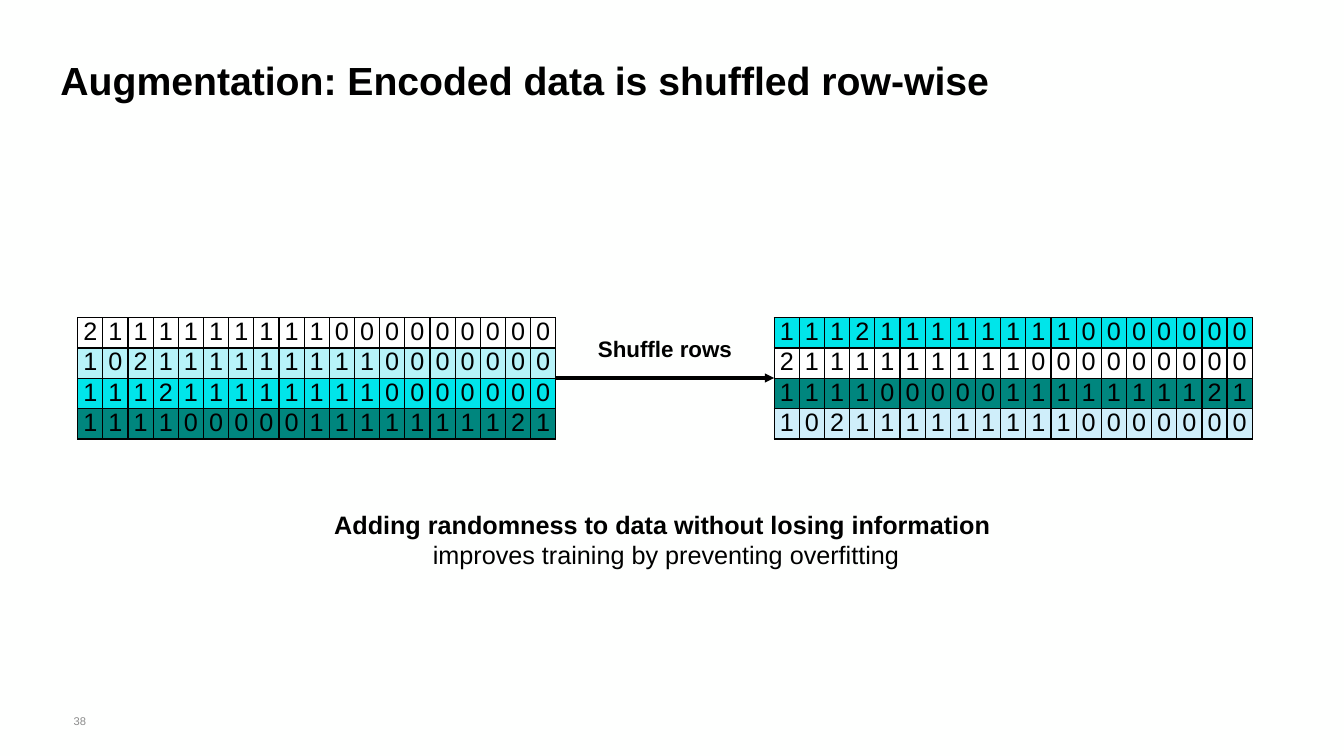
from lxml import etree
from pptx import Presentation
from pptx.dml.color import RGBColor
from pptx.enum.shapes import MSO_CONNECTOR
from pptx.enum.text import MSO_ANCHOR, MSO_AUTO_SIZE, PP_ALIGN
from pptx.oxml.ns import qn
from pptx.util import Pt

STRAIGHT = MSO_CONNECTOR.STRAIGHT
TOP, MIDDLE = MSO_ANCHOR.TOP, MSO_ANCHOR.MIDDLE
LEFT, CENTER = PP_ALIGN.LEFT, PP_ALIGN.CENTER
NO_AUTOFIT = MSO_AUTO_SIZE.NONE

BLACK = RGBColor(0x00, 0x00, 0x00)
WHITE = RGBColor(0xFF, 0xFF, 0xFF)
BACKGROUND = RGBColor(0xFE, 0xFF, 0xFE)
GREY = RGBColor(0x8C, 0x8C, 0x8C)
PALE_CYAN = RGBColor(0xB7, 0xF3, 0xF9)
PALE_BLUE = RGBColor(0xCF, 0xEE, 0xFA)
CYAN = RGBColor(0x00, 0xE5, 0xEA)
TEAL = RGBColor(0x00, 0x86, 0x7E)

# Encoded rows, one digit per cell
ROW_A = "2111111111000000000"
ROW_B = "1021111111110000000"
ROW_C = "1112111111110000000"
ROW_D = "1111000001111111121"


class SlideBuilder:
    font = "Arial"

    def __init__(self, prs):
        self.slide = prs.slides.add_slide(prs.slide_layouts[5])
        fill = self.slide.background.fill
        fill.solid()
        fill.fore_color.rgb = BACKGROUND

    def run(self, p, text, size, bold=False, color=BLACK):
        r = p.add_run()
        r.text = text
        r.font.name = self.font
        r.font.size = Pt(size)
        r.font.bold = bold
        r.font.color.rgb = color

    def title(self, text, x, y, w, h):
        sp = self.slide.shapes.title
        sp.left, sp.top, sp.width, sp.height = Pt(x), Pt(y), Pt(w), Pt(h)
        tf = sp.text_frame
        tf.word_wrap = True
        tf.auto_size = NO_AUTOFIT
        tf.vertical_anchor = MIDDLE
        p = tf.paragraphs[0]
        p.alignment = LEFT
        p.line_spacing = 0.9
        self.run(p, text, 28, bold=True)

    def text(self, lines, x, y, w, h, size, color=BLACK, anchor=TOP):
        """Centred text; lines holds (text, bold) pairs."""
        sp = self.slide.shapes.add_textbox(Pt(x), Pt(y), Pt(w), Pt(h))
        tf = sp.text_frame
        tf.word_wrap = True
        tf.vertical_anchor = anchor
        for i, (text, bold) in enumerate(lines):
            p = tf.add_paragraph() if i else tf.paragraphs[0]
            p.alignment = CENTER
            self.run(p, text, size, bold, color)

    def borders(self, cell, width=1):
        tc_pr = cell._tc.get_or_add_tcPr()
        for i, side in enumerate(("a:lnL", "a:lnR", "a:lnT", "a:lnB")):
            ln = etree.Element(qn(side), w=str(Pt(width)))
            fill = etree.SubElement(ln, qn("a:solidFill"))
            etree.SubElement(fill, qn("a:srgbClr"), val=str(BLACK))
            tc_pr.insert(i, ln)

    def table(self, rows, x, y, w, row_h):
        """Digit grid; rows holds (digits, fill colour) pairs."""
        n_cols = len(rows[0][0])
        table = self.slide.shapes.add_table(
            len(rows), n_cols, Pt(x), Pt(y), Pt(w), Pt(row_h * len(rows))).table
        table.first_row = table.horz_banding = False
        for col in table.columns:
            col.width = Pt(w / n_cols)
        for i, (digits, color) in enumerate(rows):
            table.rows[i].height = Pt(row_h)
            for j, digit in enumerate(digits):
                cell = table.cell(i, j)
                cell.margin_left = cell.margin_right = 0
                cell.margin_top = cell.margin_bottom = 0
                cell.fill.solid()
                cell.fill.fore_color.rgb = color
                self.borders(cell)
                p = cell.text_frame.paragraphs[0]
                p.alignment = CENTER
                self.run(p, digit, 18)

    def arrow(self, x1, y1, x2, y2, width):
        line = self.slide.shapes.add_connector(
            STRAIGHT, Pt(x1), Pt(y1), Pt(x2), Pt(y2))
        line.line.color.rgb = BLACK
        line.line.width = Pt(width)
        etree.SubElement(line.line._get_or_add_ln(), qn("a:tailEnd"), type="triangle")
        etree.SubElement(line._element.spPr, qn("a:effectLst"))


def main():
    prs = Presentation()
    prs.slide_width, prs.slide_height = Pt(960), Pt(540)
    s = SlideBuilder(prs)

    # Title and page number
    s.title("Augmentation: Encoded data is shuffled row-wise", 36, 36.5, 888, 45.5)
    s.text([("38", False)], 37.5, 500.5, 39, 28.5, 8, GREY, MIDDLE)

    # Encoded data before and after shuffling
    left, right, top, width = 55.5, 553, 227, 341.5
    s.table([(ROW_A, WHITE), (ROW_B, PALE_CYAN), (ROW_C, CYAN), (ROW_D, TEAL)],
            left, top, width, 20.2)
    s.table([(ROW_C, CYAN), (ROW_A, WHITE), (ROW_D, TEAL), (ROW_B, PALE_BLUE)],
            right, top, width, 21.6)

    # Shuffle arrow with its label
    s.arrow(left + width, 270, right, 270, 2.25)
    s.text([("Shuffle rows", True)], left + width, 235.5, right - left - width, 26.5, 16)

    # Takeaway
    s.text([("Adding randomness to data without losing information ", True),
            ("improves training by preventing overfitting", False)],
           195, 360, 561.5, 51, 18)

    prs.save("out.pptx")


if __name__ == "__main__":
    main()
